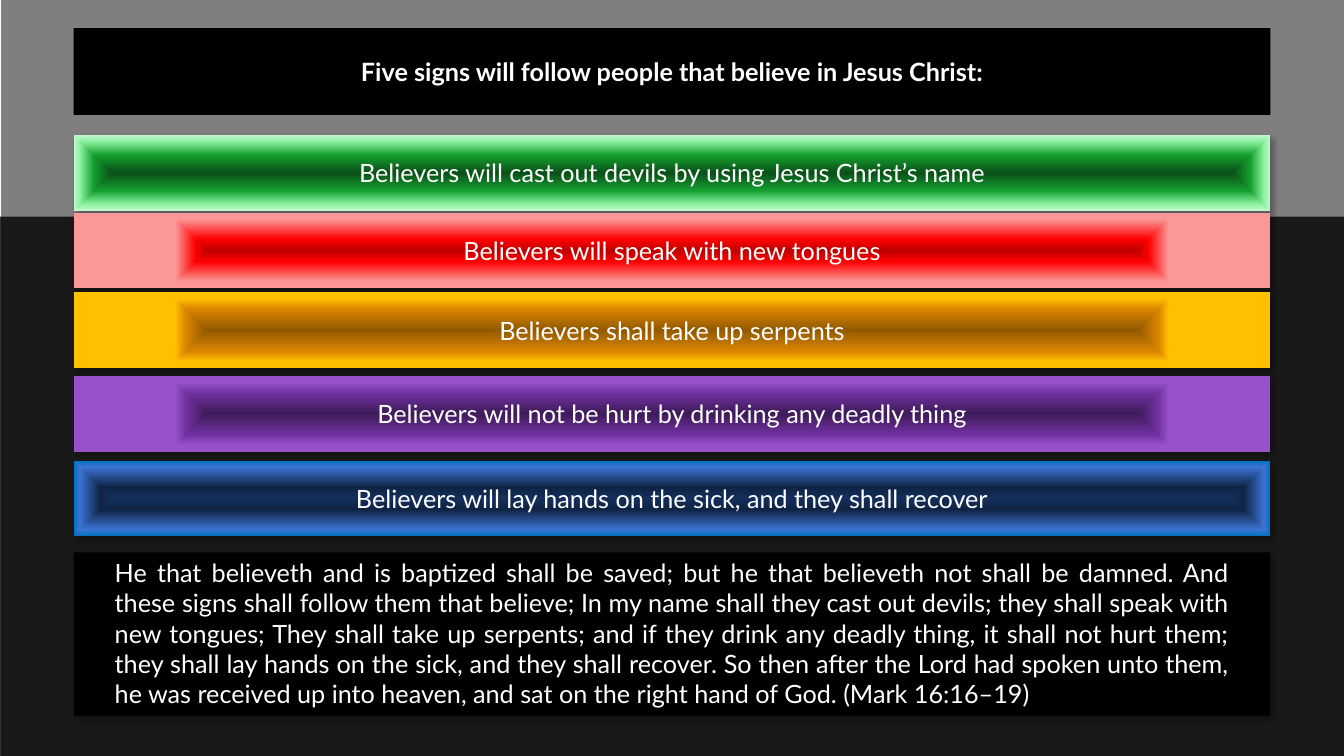
from dataclasses import dataclass

from pptx import Presentation
from pptx.dml.color import RGBColor
from pptx.enum.shapes import MSO_SHAPE
from pptx.enum.text import MSO_ANCHOR, MSO_AUTO_SIZE, PP_ALIGN
from pptx.oxml import parse_xml
from pptx.oxml.ns import nsdecls, qn
from pptx.shapes.autoshape import Shape
from pptx.slide import Slide
from pptx.util import Inches, Pt

SLIDE_WIDTH = Inches(13.33)
SLIDE_HEIGHT = Inches(7.5)


@dataclass(frozen=True)
class Theme:
    black: str = "000000"
    text: str = "FFFFFF"
    font: str = "Lato"
    size: float = 18
    shadow_opacity: int = 30
    shadow_blur: float = 4.5
    shadow_distance: float = 2.6
    shadow_angle: int = 53


THEME = Theme()


@dataclass(frozen=True)
class Area:
    """Place and size in percent of the slide's width and height."""
    left: float
    top: float
    width: float
    height: float

    def lengths(self) -> tuple[int, int, int, int]:
        return (int(SLIDE_WIDTH * self.left / 100), int(SLIDE_HEIGHT * self.top / 100),
                int(SLIDE_WIDTH * self.width / 100), int(SLIDE_HEIGHT * self.height / 100))


@dataclass(frozen=True)
class Sign:
    text: str
    top: float
    stops: tuple[tuple[int, str], ...]


PANEL_LEFT, PANEL_WIDTH, SIGN_HEIGHT = 5.48, 89.05, 10
BACKDROPS = (
    (Area(0.08, 0, 100, 100), 50),
    (Area(0, 28.67, 100, 71.33), 80),
)
TITLE = "Five signs will follow people that believe in Jesus Christ:"
TITLE_AREA = Area(PANEL_LEFT, 3.73, PANEL_WIDTH, 11.47)
SIGNS = (
    Sign("Believers will cast out devils by using Jesus Christ’s name", 17.87,
         ((0, "0A5018"), (47, "149F2F"), (82, "89F09D"), (100, "C4F8CE"))),
    Sign("Believers will speak with new tongues", 28.13,
         ((0, "C00000"), (30, "FF0000"), (83, "FA9898"), (100, "FA9898"))),
    Sign("Believers shall take up serpents", 38.67,
         ((0, "935900"), (57, "DC8600"), (83, "FFC000"), (100, "FFC000"))),
    Sign("Believers will not be hurt by drinking any deadly thing", 49.73,
         ((0, "3E1B59"), (54, "7030A0"), (83, "9752CA"), (100, "9752CA"))),
    Sign("Believers will lay hands on the sick, and they shall recover", 60.93,
         ((0, "142F5C"), (29, "0F2345"), (83, "3B74D4"), (100, "0070C0"))),
)
VERSE_PANEL = Area(PANEL_LEFT, 73.07, PANEL_WIDTH, 21.6)
VERSE_AREA = Area(7.8, 73.07, 84.4, 21.6)
VERSE = (
    "He that believeth and is baptized shall be saved; but he that believeth not shall be "
    "damned. And these signs shall follow them that believe; In my name shall they cast out "
    "devils; they shall speak with new tongues; They shall take up serpents; and if they drink "
    "any deadly thing, it shall not hurt them; they shall lay hands on the sick, and they shall "
    "recover. So then after the Lord had spoken unto them, he was received up into heaven, and "
    "sat on the right hand of God. (Mark 16:16–19)"
)


def add_panel(slide: Slide, area: Area) -> Shape:
    shape = slide.shapes.add_shape(MSO_SHAPE.RECTANGLE, *area.lengths())
    shape.shadow.inherit = False
    shape.fill.solid()
    shape.fill.fore_color.rgb = RGBColor.from_string(THEME.black)
    shape.line.fill.background()
    return shape


def set_opacity(shape: Shape, percent: int) -> None:
    color = shape.element.spPr.find(qn("a:solidFill")).find(qn("a:srgbClr"))
    color.append(parse_xml(f'<a:alpha {nsdecls("a")} val="{percent * 1000}"/>'))


def set_gradient(shape: Shape, stops: tuple[tuple[int, str], ...]) -> None:
    """Fill from the centre outwards along a rectangle."""
    stop_list = "".join(f'<a:gs pos="{position * 1000}"><a:srgbClr val="{color}"/></a:gs>'
                        for position, color in stops)
    properties = shape.element.spPr
    properties.replace(properties.find(qn("a:solidFill")), parse_xml(
        f'<a:gradFill {nsdecls("a")} rotWithShape="1"><a:gsLst>{stop_list}</a:gsLst>'
        '<a:path path="rect"><a:fillToRect l="50000" t="50000" r="50000" b="50000"/></a:path>'
        '</a:gradFill>'))


def add_shadow(shape: Shape) -> None:
    shape.element.spPr.find(qn("a:effectLst")).append(parse_xml(
        f'<a:outerShdw {nsdecls("a")} blurRad="{Pt(THEME.shadow_blur)}" '
        f'dist="{Pt(THEME.shadow_distance)}" dir="{THEME.shadow_angle * 60000}" '
        f'algn="tl" rotWithShape="0"><a:srgbClr val="{THEME.black}">'
        f'<a:alpha val="{THEME.shadow_opacity * 1000}"/></a:srgbClr></a:outerShdw>'))


def write(shape: Shape, text: str, alignment: PP_ALIGN = PP_ALIGN.CENTER,
          anchor: MSO_ANCHOR = MSO_ANCHOR.MIDDLE, bold: bool = False) -> None:
    frame = shape.text_frame
    frame.text = text
    frame.word_wrap = True
    frame.vertical_anchor = anchor
    paragraph = frame.paragraphs[0]
    paragraph.alignment = alignment
    font = paragraph.runs[0].font
    font.name = THEME.font
    font.size = Pt(THEME.size)
    font.bold = bold
    font.color.rgb = RGBColor.from_string(THEME.text)


def add_sign(slide: Slide, sign: Sign) -> None:
    shape = add_panel(slide, Area(PANEL_LEFT, sign.top, PANEL_WIDTH, SIGN_HEIGHT))
    set_gradient(shape, sign.stops)
    add_shadow(shape)
    write(shape, sign.text)


def add_verse(slide: Slide) -> None:
    add_shadow(add_panel(slide, VERSE_PANEL))
    verse = slide.shapes.add_textbox(*VERSE_AREA.lengths())
    write(verse, VERSE, PP_ALIGN.JUSTIFY, MSO_ANCHOR.TOP)
    verse.text_frame.auto_size = MSO_AUTO_SIZE.SHAPE_TO_FIT_TEXT


def main() -> None:
    presentation = Presentation()
    presentation.slide_width = SLIDE_WIDTH
    presentation.slide_height = SLIDE_HEIGHT
    slide = presentation.slides.add_slide(presentation.slide_layouts[6])
    for area, opacity in BACKDROPS:
        set_opacity(add_panel(slide, area), opacity)
    add_verse(slide)
    write(add_panel(slide, TITLE_AREA), TITLE, bold=True)
    for sign in SIGNS:
        add_sign(slide, sign)
    presentation.save("out.pptx")


if __name__ == "__main__":
    main()
